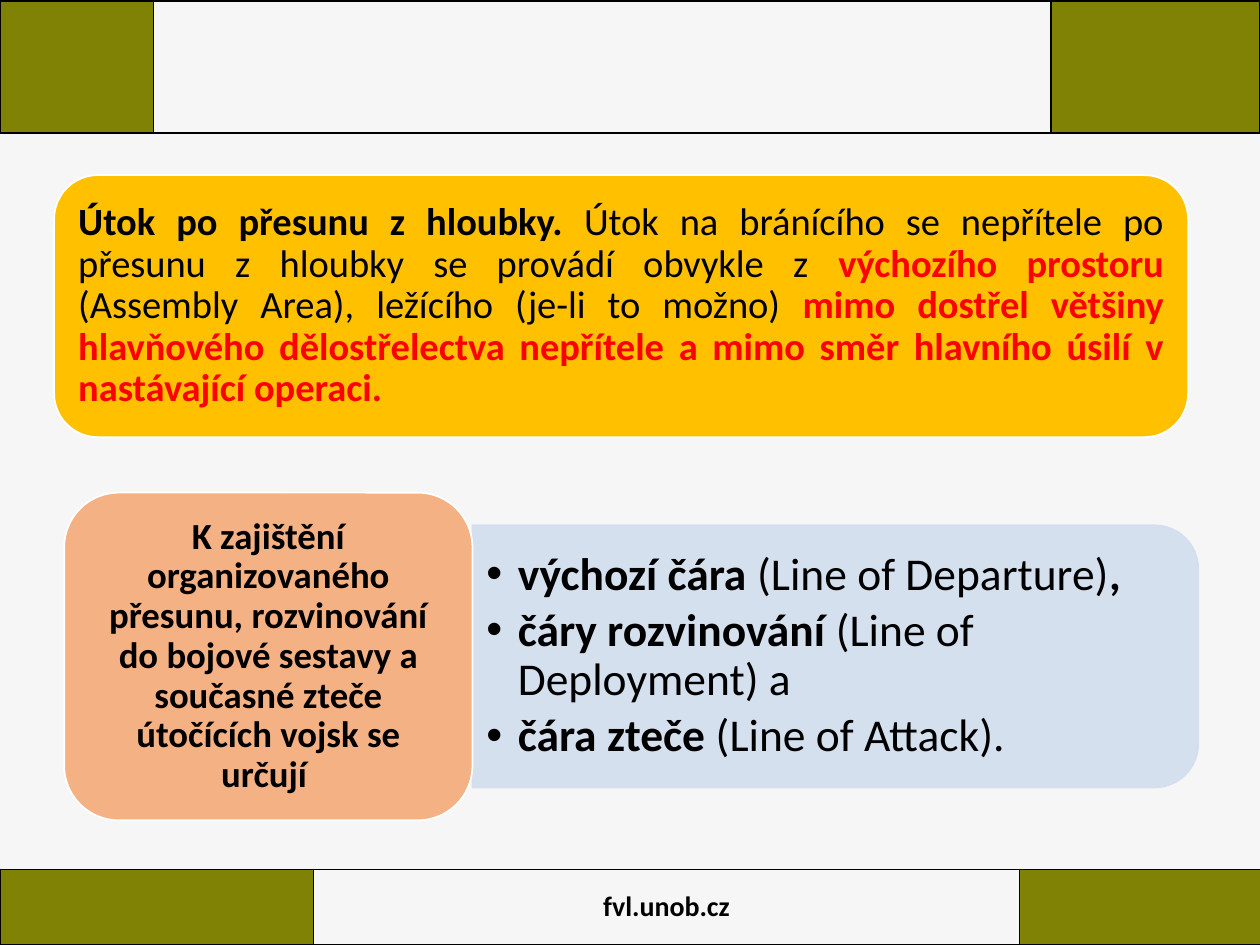
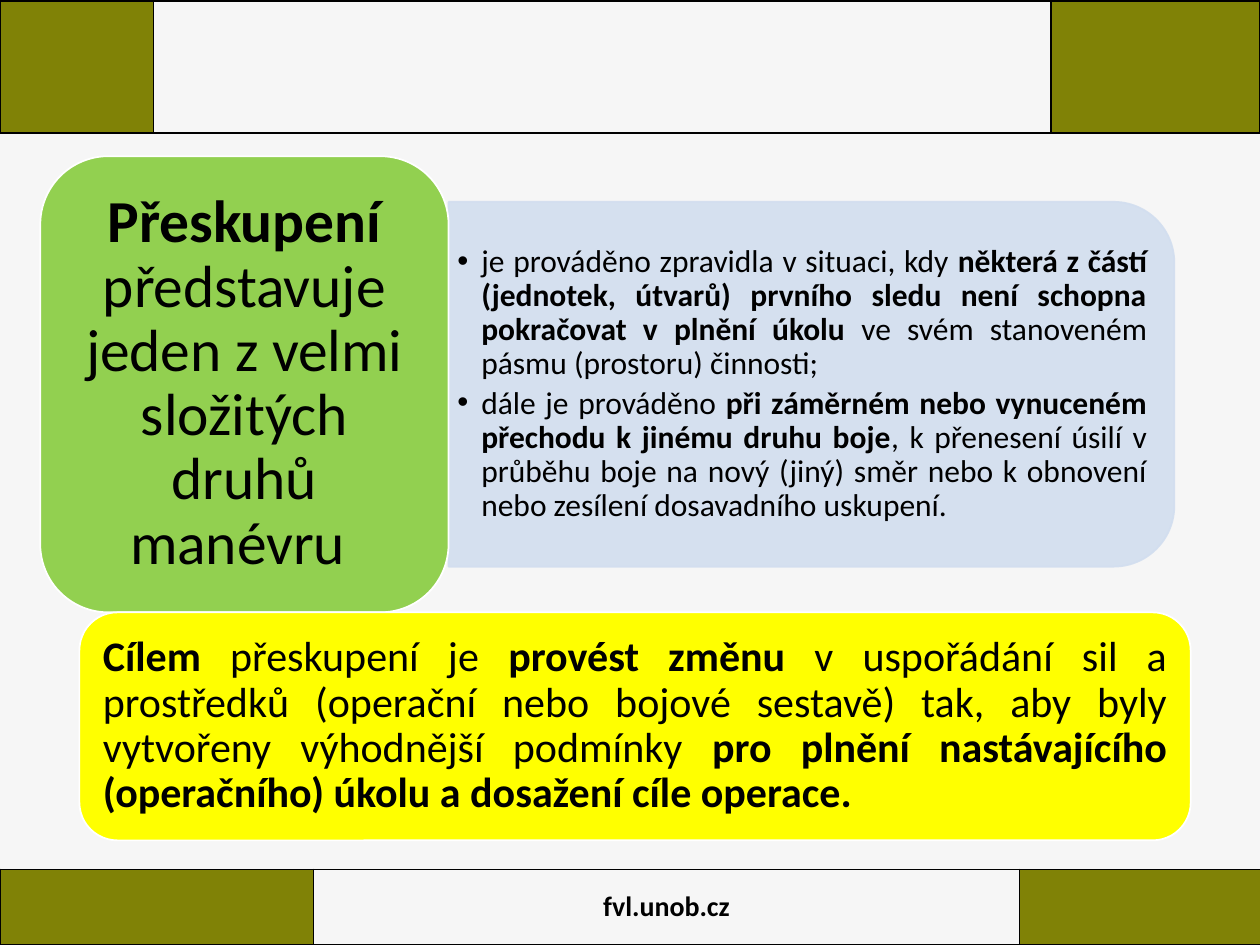
from dataclasses import dataclass

from lxml import etree
from pptx import Presentation
from pptx import util as u
from pptx.dml.color import RGBColor
from pptx.enum import shapes, text
from pptx.oxml import ns


@dataclass(frozen=True)
class Theme:
    font: str = "Calibri"
    background: str = "F6F6F6"
    olive: str = "808206"
    black: str = "000000"
    white: str = "FFFFFF"
    red: str = "FF0000"
    amber: str = "FFC000"
    peach: str = "F4B183"
    green: str = "92D050"
    yellow: str = "FFFF00"
    panel: str = "D2DEEF"
    panel_alpha: int = 90000
    footer_size: int = 16
    passage_size: int = 22
    label_size: int = 21
    lines_size: int = 26
    headline_size: int = 34
    reasons_size: int = 18
    goal_size: int = 24


theme = Theme()
center, justify = text.PP_ALIGN.CENTER, text.PP_ALIGN.JUSTIFY
STYLES = {
    "plain": {"bold": False, "color": theme.black},
    "bold": {"bold": True, "color": theme.black},
    "alert": {"bold": True, "color": theme.red},
}
PANEL_WIDTH = 0.576
PANEL_SHARE = 0.8
CORNER_INSET = 0.05

presentation = Presentation()
presentation.slide_width, presentation.slide_height = u.Inches(10), u.Inches(7.5)
width, height = presentation.slide_width, presentation.slide_height
master = presentation.slide_master
master.background.fill.solid()
master.background.fill.fore_color.rgb = RGBColor.from_string(theme.background)


def write_runs(paragraph, runs, size, alignment):
    formats = {"alignment": alignment, "line_spacing": 0.9, "space_before": u.Pt(0)}
    for name, value in formats.items():
        setattr(paragraph, name, value)
    for style, words in runs:
        run = paragraph.add_run()
        run.text = words
        font_format = {"name": theme.font, "size": u.Pt(size), "bold": STYLES[style]["bold"]}
        for name, value in font_format.items():
            setattr(run.font, name, value)
        run.font.color.rgb = RGBColor.from_string(STYLES[style]["color"])


def set_frame(frame, side, top):
    formats = {
        "word_wrap": True,
        "auto_size": text.MSO_AUTO_SIZE.NONE,
        "vertical_anchor": text.MSO_ANCHOR.MIDDLE,
        "margin_left": u.Inches(side),
        "margin_right": u.Inches(side),
        "margin_top": u.Inches(top),
        "margin_bottom": u.Inches(top),
    }
    for name, value in formats.items():
        setattr(frame, name, value)


slide_blocks = [
    [
        {
            "box": (0.043, 0.1853, 0.9, 0.2773), "fill": theme.amber,
            "size": theme.passage_size, "alignment": justify, "margins": (0.09, 0.09),
            "runs": [
                ("bold", "Útok po přesunu z hloubky. "),
                ("plain", "Útok na bránícího se nepřítele po přesunu z hloubky se provádí obvykle z "),
                ("alert", "výchozího prostoru "),
                ("plain", "(Assembly Area), ležícího (je-li to možno) "),
                ("alert", "mimo dostřel většiny hlavňového dělostřelectva nepřítele "
                          "a mimo směr hlavního úsilí v nastávající operaci."),
            ],
        },
        {
            "box": (0.051, 0.5213, 0.324, 0.3467), "fill": theme.peach,
            "size": theme.label_size, "alignment": center, "margins": (0.09, 0.04),
            "runs": [
                ("bold", "K zajištění organizovaného přesunu, rozvinování do bojové sestavy "
                         "a současné zteče útočících vojsk se určují "),
            ],
            "list": {
                "size": theme.lines_size, "alignment": text.PP_ALIGN.LEFT,
                "margins": (0.11, 0.05), "indent": 0.25,
                "items": [
                    [("bold", "výchozí čára "), ("plain", "(Line of Departure)"), ("bold", ",")],
                    [("bold", "čáry rozvinování "), ("plain", "(Line of Deployment) a")],
                    [("bold", "čára zteče "), ("plain", "(Line of Attack).")],
                ],
            },
        },
    ],
    [
        {
            "box": (0.032, 0.1653, 0.324, 0.4827), "fill": theme.green,
            "size": theme.headline_size, "alignment": center, "margins": (0.14, 0.07),
            "runs": [
                ("bold", "Přeskupení"),
                ("plain", " představuje jeden z velmi složitých druhů manévru "),
            ],
            "list": {
                "size": theme.reasons_size, "alignment": justify,
                "margins": (0.07, 0.04), "indent": 0.19,
                "items": [
                    [
                        ("plain", "je prováděno zpravidla v situaci, kdy "),
                        ("bold", "některá z částí (jednotek, útvarů) prvního sledu "
                                 "není schopna pokračovat v plnění úkolu"),
                        ("plain", " ve svém stanoveném pásmu (prostoru) činnosti; "),
                    ],
                    [
                        ("plain", "dále je prováděno "),
                        ("bold", "při záměrném nebo vynuceném přechodu k jinému druhu boje"),
                        ("plain", ", k přenesení úsilí v průběhu boje na nový (jiný) směr "
                                  "nebo k obnovení nebo zesílení dosavadního uskupení."),
                    ],
                ],
            },
        },
        {
            "box": (0.063, 0.648, 0.882, 0.2413), "fill": theme.yellow,
            "size": theme.goal_size, "alignment": justify, "margins": (0.1, 0.1),
            "runs": [
                ("bold", "Cílem"),
                ("plain", " přeskupení je "),
                ("bold", "provést změnu"),
                ("plain", " v uspořádání sil a prostředků (operační nebo bojové sestavě) tak, "
                          "aby byly vytvořeny výhodnější podmínky "),
                ("bold", "pro plnění nastávajícího (operačního) úkolu a dosažení cíle operace. "),
            ],
        },
    ],
]

slides = [presentation.slides.add_slide(presentation.slide_layouts[1]) for _ in slide_blocks]

bands = [
    {"top": 0.92, "height": 0.08, "columns": (0.249, 0.56, 0.192), "label": "fvl.unob.cz"},
    {"top": 0.001, "height": 0.14, "columns": (0.122, 0.712, 0.166), "label": ""},
]
for band in bands:
    frame = slides[0].shapes.add_table(
        1, 3, 0, int(band["top"] * height), int(sum(band["columns"]) * width), int(band["height"] * height))
    table = frame.table
    table.first_row = table.horz_banding = False
    for index, share in enumerate(band["columns"]):
        table.columns[index].width = int(share * width)
        cell = table.cell(0, index)
        cell.vertical_anchor = text.MSO_ANCHOR.MIDDLE
        properties = cell._tc.get_or_add_tcPr()
        for side in ("lnL", "lnR", "lnT", "lnB"):
            border = etree.SubElement(properties, ns.qn(f"a:{side}"), w=str(u.Pt(1)))
            solid = etree.SubElement(border, ns.qn("a:solidFill"))
            etree.SubElement(solid, ns.qn("a:srgbClr"), val=theme.black)
        if index == 1:
            cell.fill.background()
        else:
            cell.fill.solid()
            cell.fill.fore_color.rgb = RGBColor.from_string(theme.olive)
    if band["label"]:
        paragraph = table.cell(0, 1).text_frame.paragraphs[0]
        write_runs(paragraph, [("bold", band["label"])], theme.footer_size, center)
    master.shapes._spTree.append(frame._element)

for slide, blocks in zip(slides, slide_blocks):
    title = slide.shapes.title._element
    title.getparent().remove(title)
    body = slide.placeholders[1]

    for block in blocks:
        left, top, box_width, box_height = [
            int(share * size) for share, size in zip(block["box"], (width, height) * 2)]

        if "list" in block:
            bullets = block["list"]
            panel_left = left + box_width
            panel_width = int(PANEL_WIDTH * width)
            panel_height = int(PANEL_SHARE * box_height)
            panel_top = top + (box_height - panel_height) // 2
            panel = slide.shapes.add_shape(
                shapes.MSO_SHAPE.ROUND_2_SAME_RECTANGLE,
                panel_left + (panel_width - panel_height) // 2,
                panel_top + (panel_height - panel_width) // 2,
                panel_height, panel_width)
            panel.rotation = 90
            panel.shadow.inherit = False
            panel.line.width = u.Pt(1)
            for fill in (panel.fill, panel.line.fill):
                fill.solid()
                fill.fore_color.rgb = RGBColor.from_string(theme.panel)
            for color in panel._element.spPr.iter(ns.qn("a:srgbClr")):
                etree.SubElement(color, ns.qn("a:alpha"), val=str(theme.panel_alpha))

            inset = int(CORNER_INSET * panel_height)
            position = {
                "left": panel_left, "top": panel_top + inset,
                "width": panel_width - inset, "height": panel_height - 2 * inset,
            }
            for name, value in position.items():
                setattr(body, name, value)
            slide.shapes._spTree.append(body._element)
            set_frame(body.text_frame, *bullets["margins"])
            for index, runs in enumerate(bullets["items"]):
                paragraph = body.text_frame.add_paragraph() if index else body.text_frame.paragraphs[0]
                paragraph.level = 1
                properties = paragraph._p.get_or_add_pPr()
                properties.set("marL", str(u.Inches(bullets["indent"])))
                properties.set("indent", str(-u.Inches(bullets["indent"])))
                etree.SubElement(properties, ns.qn("a:buChar"), char="•")
                paragraph.space_after = u.Pt(round(0.15 * bullets["size"]))
                write_runs(paragraph, runs, bullets["size"], bullets["alignment"])

        shape = slide.shapes.add_shape(
            shapes.MSO_SHAPE.ROUNDED_RECTANGLE, left, top, box_width, box_height)
        shape.shadow.inherit = False
        shape.line.width = u.Pt(1)
        for fill, color in ((shape.fill, block["fill"]), (shape.line.fill, theme.white)):
            fill.solid()
            fill.fore_color.rgb = RGBColor.from_string(color)
        set_frame(shape.text_frame, *block["margins"])
        write_runs(shape.text_frame.paragraphs[0], block["runs"], block["size"], block["alignment"])

presentation.save("out.pptx")
